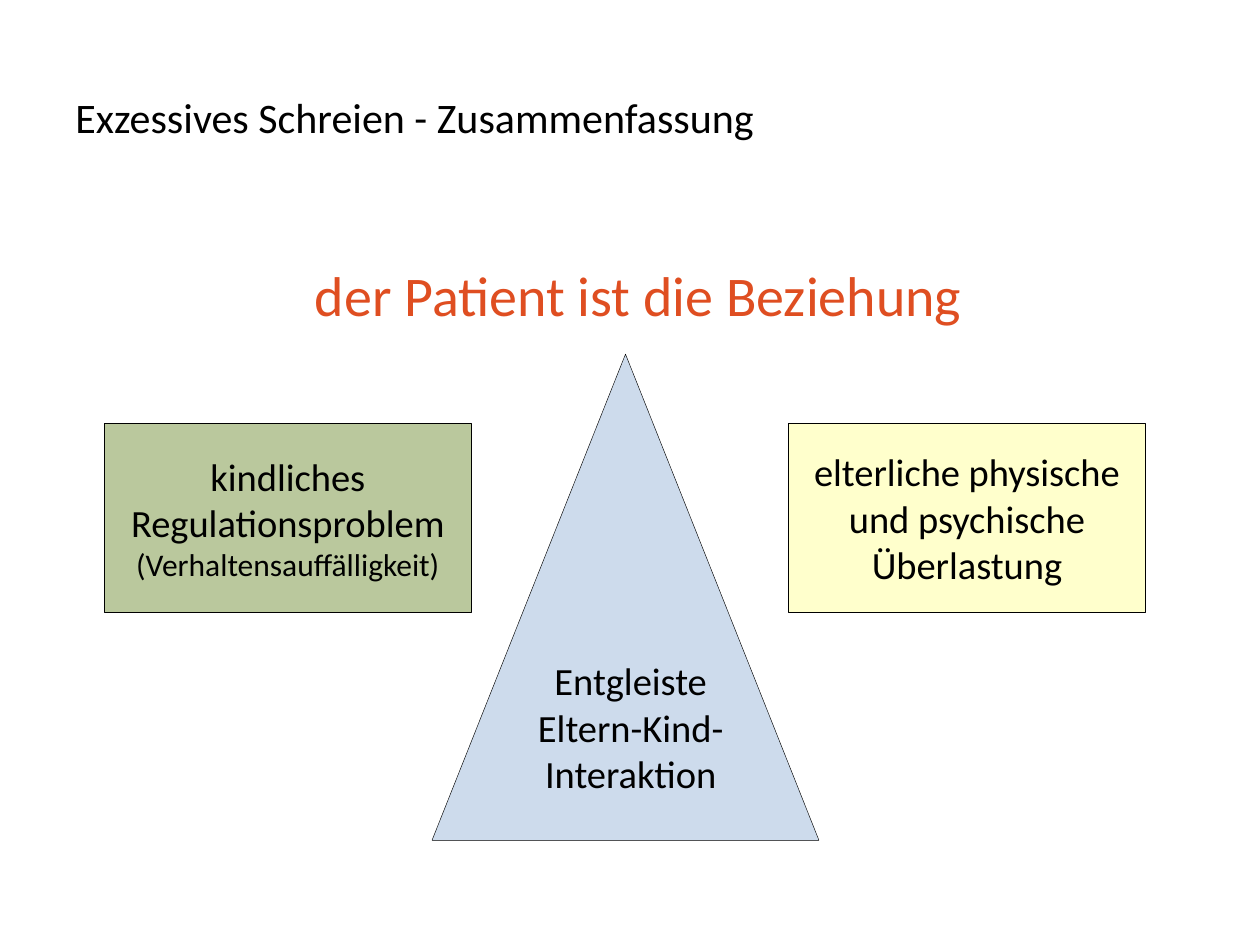
from dataclasses import dataclass

from lxml.etree import SubElement as Sub
from pptx import Presentation
from pptx.dml.color import RGBColor as Rgb
from pptx.enum.shapes import MSO_SHAPE as Kind
from pptx.enum.text import MSO_ANCHOR as Anchor, PP_ALIGN as Align
from pptx.oxml.ns import qn
from pptx.util import Cm, Pt


@dataclass(frozen=True)
class Theme:
    font: str = "Calibri"
    ink: str = "000000"
    red: str = "DF4E21"
    blue: str = "B9CDE5"
    green: str = "77933C"
    cream: str = "FFFFCC"
    claim: int = 32
    title: int = 24
    body: int = 22
    note: int = 18
    edge: float = 0.25


THEME = Theme()


def write(shape, text, sizes, tint=THEME.ink, align=Align.CENTER, anchor=Anchor.MIDDLE):
    frame = shape.text_frame
    frame.word_wrap = True
    frame.vertical_anchor = anchor
    frame.text = text
    for para, size in zip(frame.paragraphs, sizes):
        para.alignment = align
        for run in para.runs:
            run.font.name = THEME.font
            run.font.size = Pt(size)
            run.font.color.rgb = Rgb.from_string(tint)


def add_text(slide, area, text, size, **style):
    box = slide.shapes.add_textbox(*map(Cm, area))
    write(box, text, [size], **style)


def add_form(slide, kind, area, tint, alpha=100):
    form = slide.shapes.add_shape(kind, *map(Cm, area))
    form.shadow.inherit = False
    form.fill.solid()
    form.fill.fore_color.rgb = Rgb.from_string(tint)
    if alpha < 100:
        color = form.fill._xPr.find(qn("a:solidFill"))[0]
        Sub(color, qn("a:alpha"), val=str(alpha * 1000))
    form.line.color.rgb = Rgb.from_string(THEME.ink)
    form.line.width = Pt(THEME.edge)
    return form


def main():
    deck = Presentation()
    deck.slide_width, deck.slide_height = Cm(25.4), Cm(19.05)
    slide = deck.slides.add_slide(deck.slide_layouts[6])

    add_form(slide, Kind.ISOSCELES_TRIANGLE, (8.71, 7.14, 7.8, 9.8), THEME.blue, 70)
    add_text(slide, (1.27, 0.76, 22.86, 3.18), "Exzessives Schreien - Zusammenfassung",
             THEME.title, align=Align.LEFT)
    add_text(slide, (10.11, 13.13, 5.21, 3.07), "Entgleiste Eltern-Kind-Interaktion",
             THEME.body, anchor=Anchor.TOP)
    add_text(slide, (6.1, 5.13, 15.19, 1.63), "der Patient ist die Beziehung",
             THEME.claim, tint=THEME.red, align=Align.LEFT, anchor=Anchor.TOP)

    top, high = 8.53, 3.81
    child = add_form(slide, Kind.RECTANGLE, (2.11, top, 7.39, high), THEME.green, 50)
    write(child, "kindliches Regulationsproblem\n(Verhaltensauffälligkeit)",
          [THEME.body, THEME.note])
    adult = add_form(slide, Kind.RECTANGLE, (15.9, top, 7.19, high), THEME.cream)
    write(adult, "elterliche physische und psychische Überlastung", [THEME.body])

    deck.save("out.pptx")


if __name__ == "__main__":
    main()
